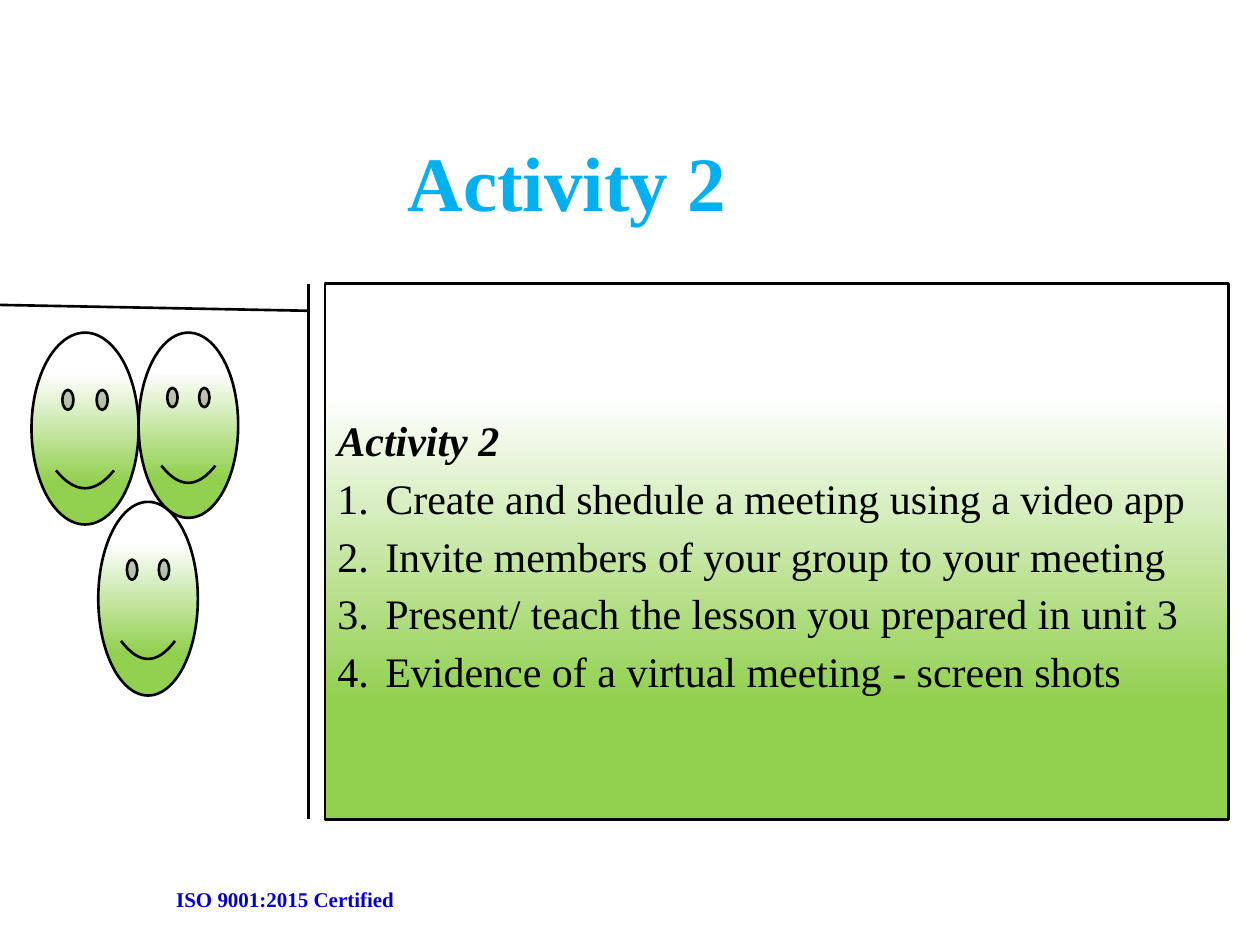
from pptx import Presentation
from pptx.dml.color import RGBColor
from pptx.enum.shapes import MSO_SHAPE
from pptx.enum.text import MSO_ANCHOR, PP_ALIGN
from pptx.oxml.ns import qn
from pptx.util import Inches, Pt
from lxml import etree

CALLOUT = MSO_SHAPE.LINE_CALLOUT_1_BORDER_AND_ACCENT_BAR
SMILEY = MSO_SHAPE.SMILEY_FACE
MIDDLE = MSO_ANCHOR.MIDDLE
LEFT, CENTER, JUSTIFY = PP_ALIGN.LEFT, PP_ALIGN.CENTER, PP_ALIGN.JUSTIFY

WHITE = RGBColor(0xFF, 0xFF, 0xFF)
GREEN = RGBColor(0x92, 0xD0, 0x50)
BLACK = RGBColor(0, 0, 0)
SKY = RGBColor(0x00, 0xB0, 0xF0)
BLUE = RGBColor(0x00, 0x00, 0xCC)

WIDTH, HEIGHT = 10, 7.5
GRADIENT = ((0.21, WHITE), (0.78, GREEN))
FONT = "Times New Roman"
TITLE = {"size": Pt(44), "bold": True}
FOOTER = {"size": Pt(12), "bold": True}
HEADING = {"size": Pt(24), "bold": True, "italic": True}
STEP = {"size": Pt(24), "bold": False, "italic": False}

STEPS = (
    ("Create and shedule a meeting using a video app", LEFT),
    ("Invite members of your group to your meeting", LEFT),
    ("Present/ teach the lesson you prepared in unit 3", LEFT),
    ("Evidence of a virtual meeting - screen shots", JUSTIFY),
)
FACES = (
    (0.025, 0.352, 0.085, 0.203),
    (0.11, 0.352, 0.079, 0.196),
    (0.078, 0.531, 0.079, 0.205),
)


def place(left, top, width, height):
    return (Inches(left * WIDTH), Inches(top * HEIGHT),
            Inches(width * WIDTH), Inches(height * HEIGHT))


def write(paragraph, text, color, font_format, alignment=LEFT):
    paragraph.text = text
    paragraph.alignment = alignment
    paragraph.font.name = FONT
    paragraph.font.color.rgb = color
    for name, value in font_format.items():
        setattr(paragraph.font, name, value)


def indent(paragraph, inches, numbered=False):
    properties = paragraph._p.get_or_add_pPr()
    properties.set("marL", str(Inches(inches)))
    properties.set("indent", str(-Inches(inches)))
    if numbered:
        bullet = etree.SubElement(properties, qn("a:buAutoNum"))
        bullet.set("type", "arabicPeriod")
    paragraph.line_spacing = 1.15


def add_label(slide, box, text, color, font_format, alignment=LEFT, anchor=None):
    label = slide.shapes.add_textbox(*place(*box))
    label.text_frame.word_wrap = True
    label.text_frame.vertical_anchor = anchor
    write(label.text_frame.paragraphs[0], text, color, font_format, alignment)


def add_gradient_shape(slide, kind, box, adjustments):
    shape = slide.shapes.add_shape(kind, *place(*box))
    shape.shadow.inherit = False
    for index, value in enumerate(adjustments):
        shape.adjustments[index] = value
    shape.fill.gradient()
    shape.fill.gradient_angle = 270
    for stop, (position, color) in zip(shape.fill.gradient_stops, GRADIENT):
        stop.position = position
        stop.color.rgb = color
    shape.line.color.rgb = BLACK
    shape.line.width = Pt(1.5)
    return shape


def add_activity(slide):
    callout = add_gradient_shape(slide, CALLOUT, (0.258, 0.3, 0.717, 0.567),
                                 (0.051, -0.018, 0.038, -0.422))
    frame = callout.text_frame
    frame.word_wrap = True
    frame.vertical_anchor = MIDDLE
    heading = frame.paragraphs[0]
    indent(heading, 0.25)
    write(heading, "Activity 2", BLACK, HEADING)
    for text, alignment in STEPS:
        paragraph = frame.add_paragraph()
        indent(paragraph, 0.38, numbered=True)
        write(paragraph, text, BLACK, STEP, alignment)


def main():
    presentation = Presentation()
    presentation.slide_width = Inches(WIDTH)
    presentation.slide_height = Inches(HEIGHT)
    slide = presentation.slides.add_slide(presentation.slide_layouts[6])
    add_label(slide, (0.13, 0.932, 0.519, 0.04), "ISO 9001:2015 Certified",
              BLUE, FOOTER)
    add_label(slide, (0, 0.108, 0.9, 0.167), "Activity 2", SKY, TITLE,
              CENTER, MIDDLE)
    add_activity(slide)
    for box in FACES:
        add_gradient_shape(slide, SMILEY, box, (0.047,))
    presentation.save("out.pptx")


if __name__ == "__main__":
    main()
